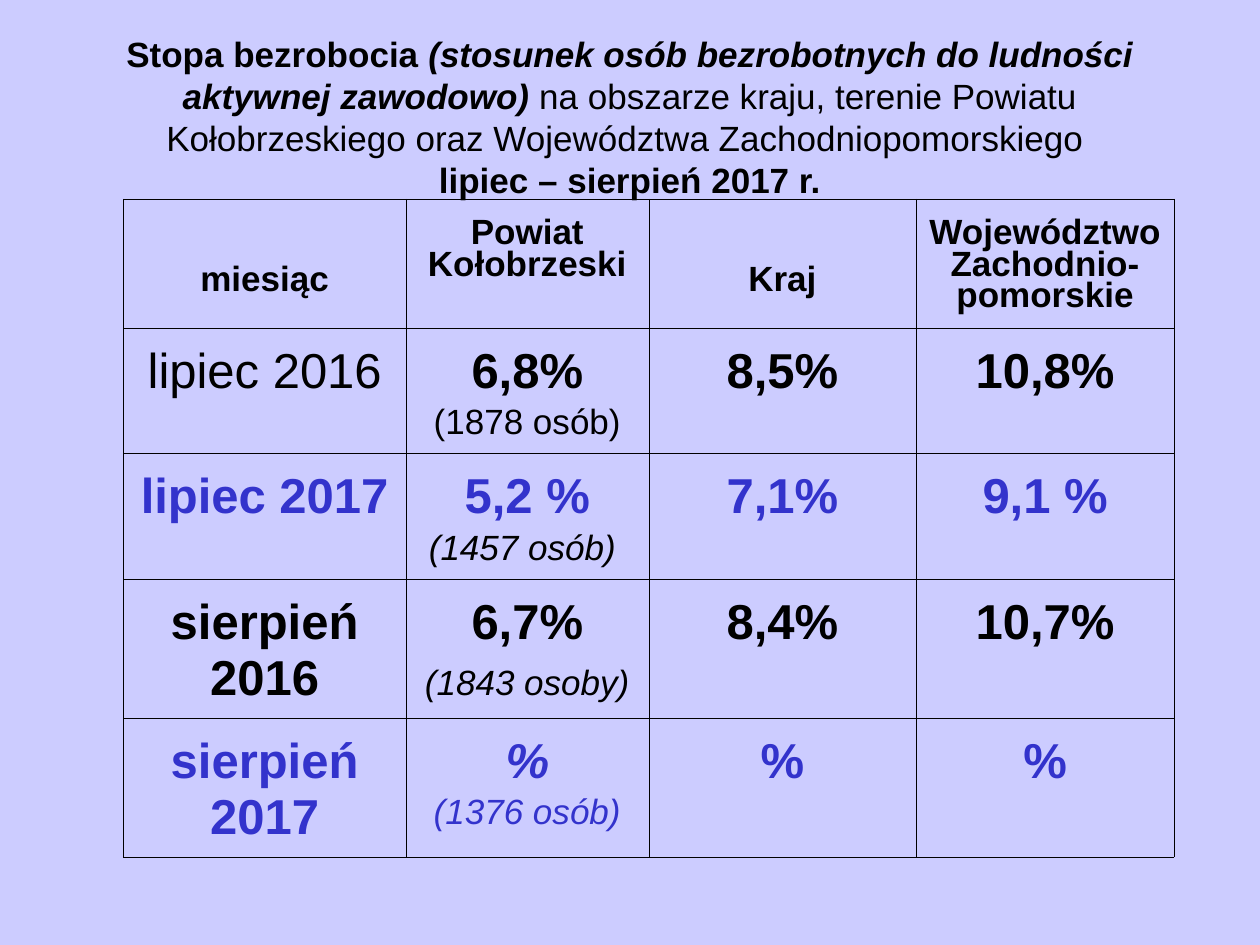
import pptx
import pptx.dml.color
import pptx.enum.text
import pptx.oxml
import pptx.oxml.ns
import pptx.util

Inches = pptx.util.Inches
Pt = pptx.util.Pt
RGBColor = pptx.dml.color.RGBColor
CENTER = pptx.enum.text.PP_ALIGN.CENTER

LAVENDER = RGBColor(0xCC, 0xCC, 0xFF)
BLACK = RGBColor(0, 0, 0)
BLUE = RGBColor(0x33, 0x33, 0xCC)

PLAIN = {"size": Pt(20), "bold": False, "italic": False}
HEADER = {**PLAIN, "bold": True}
ITALIC = {**PLAIN, "italic": True}
BOLD_ITALIC = {**HEADER, "italic": True}
MONTH = {**PLAIN, "size": Pt(28)}
RATE = {**MONTH, "bold": True}
RATE_ITALIC = {**RATE, "italic": True}
BLUE_RATE = {**RATE, "color": BLUE}

TITLE = [
    ("Stopa bezrobocia ", HEADER),
    ("(stosunek osób bezrobotnych do ludności aktywnej zawodowo)", BOLD_ITALIC),
    (" na obszarze kraju, terenie Powiatu Kołobrzeskiego "
     "oraz Województwa Zachodniopomorskiego ", PLAIN),
]
TITLE_PERIOD = ("lipiec – sierpień 2017 r.", HEADER)

HEADERS = [
    ("miesiąc", 0.53),
    ("Powiat Kołobrzeski", 0.16),
    ("Kraj", 0.53),
    ("Województwo Zachodnio-pomorskie", 0.16),
]
ROWS = [
    (["lipiec 2016"], MONTH, "6,8%", RATE,
     [("(1878 osób)", PLAIN)], "8,5%", "10,8%", BLACK),
    (["lipiec 2017"], RATE, "5,2 %", RATE,
     [("(1457 osób) ", {**ITALIC, "color": BLACK})], "7,1%", "9,1 %", BLUE),
    (["sierpień", "2016"], RATE, "6,7%", RATE,
     [("(1843 osoby)", ITALIC), (" ", MONTH)], "8,4%", "10,7%", BLACK),
    (["sierpień", "2017"], RATE, "%", RATE_ITALIC,
     [("(1376 osób)", ITALIC)], "%", "%", BLUE),
]
COL_WIDTHS = [2.24, 1.93, 2.12, 2.05]
ROW_HEIGHTS = [0.94, 0.95, 0.88, 0.88, 0.88]
OUTER_LINE, INNER_LINE = 0.23, 0.11


def add_run(p, text, style, color=BLACK):
    r = p.add_run()
    r.text = text
    for name, value in {"name": "Arial", "color": color, **style}.items():
        if name == "color":
            r.font.color.rgb = value
        else:
            setattr(r.font, name, value)


def set_margins(target, top):
    margins = {"left": 0.1, "top": top, "right": 0.1, "bottom": 0.05}
    for side, value in margins.items():
        setattr(target, f"margin_{side}", Inches(value))


def set_borders(cell, widths):
    tcPr = cell._tc.get_or_add_tcPr()
    for i, (side, width) in enumerate(widths.items()):
        ln = pptx.oxml.parse_xml(
            f'<a:ln{side} {pptx.oxml.ns.nsdecls("a")} w="{Pt(width)}">'
            f'<a:solidFill><a:srgbClr val="{BLACK}"/></a:solidFill></a:ln{side}>')
        tcPr.insert(i, ln)


def fill_cell(cell, paragraphs, top, space_before, color):
    set_margins(cell, top)
    tf = cell.text_frame
    for i, runs in enumerate(paragraphs):
        p = tf.add_paragraph() if i else tf.paragraphs[0]
        p.alignment = CENTER
        p.line_spacing = 0.81
        p.space_before = Pt(space_before)
        for text, style in runs:
            add_run(p, text, style, color)


def add_title(slide):
    sp = slide.shapes.add_textbox(Inches(0.5), Inches(0.3), Inches(9), Inches(1.25))
    tf = sp.text_frame
    tf.word_wrap = True
    tf.vertical_anchor = pptx.enum.text.MSO_ANCHOR.MIDDLE
    set_margins(tf, 0.05)
    p = tf.paragraphs[0]
    p.alignment = CENTER
    for text, style in TITLE:
        add_run(p, text, style)
    p.add_line_break()
    add_run(p, *TITLE_PERIOD)


def add_rate_table(slide):
    n_rows, n_cols = len(ROW_HEIGHTS), len(COL_WIDTHS)
    table = slide.shapes.add_table(
        n_rows, n_cols, Inches(0.98), Inches(1.58),
        Inches(sum(COL_WIDTHS)), Inches(sum(ROW_HEIGHTS))).table
    table.first_row = table.horz_banding = False
    for column, width in zip(table.columns, COL_WIDTHS):
        column.width = Inches(width)
    for row, height in zip(table.rows, ROW_HEIGHTS):
        row.height = Inches(height)

    for c, (text, top) in enumerate(HEADERS):
        fill_cell(table.cell(0, c), [[(text, HEADER)]], top, 5, BLACK)
    for r, row in enumerate(ROWS, 1):
        month, month_style, county, county_style, people, country, region, color = row
        contents = [
            [[(text, month_style)] for text in month],
            [[(county, county_style)], people],
            [[(country, RATE)]],
            [[(region, RATE)]],
        ]
        for c, paragraphs in enumerate(contents):
            fill_cell(table.cell(r, c), paragraphs, 0.2, 7, color)

    for r in range(n_rows):
        for c in range(n_cols):
            cell = table.cell(r, c)
            cell.fill.background()
            set_borders(cell, {
                "L": INNER_LINE if c else OUTER_LINE,
                "R": OUTER_LINE if c == n_cols - 1 else INNER_LINE,
                "T": INNER_LINE if r else OUTER_LINE,
                "B": INNER_LINE,
            })


def main():
    prs = pptx.Presentation()
    prs.slide_width, prs.slide_height = Inches(10), Inches(7.5)
    slide = prs.slides.add_slide(prs.slide_layouts[6])
    slide.background.fill.solid()
    slide.background.fill.fore_color.rgb = LAVENDER
    add_title(slide)
    add_rate_table(slide)
    prs.save("out.pptx")


if __name__ == "__main__":
    main()
